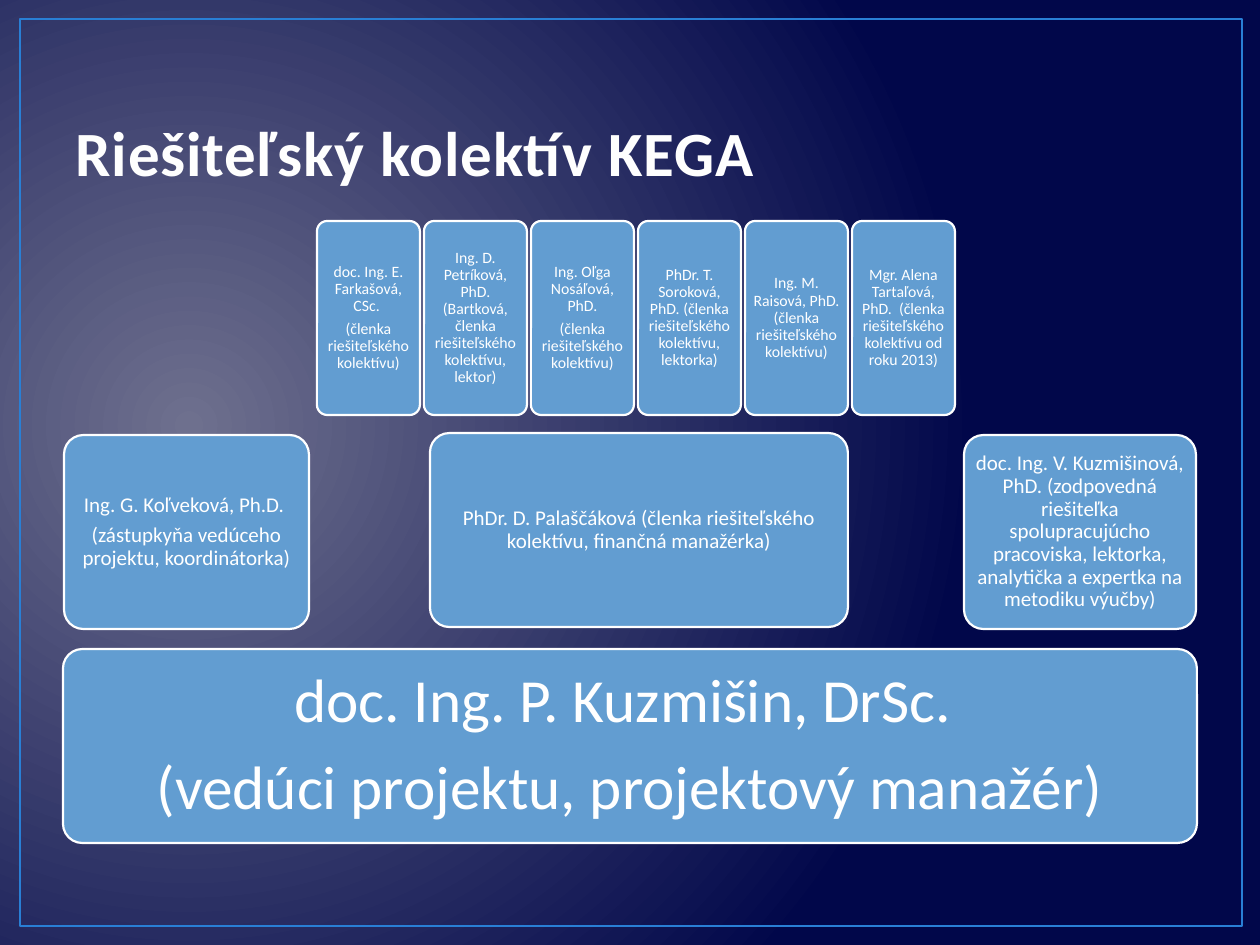
from lxml.etree import SubElement
from pptx import Presentation
from pptx.dml.color import RGBColor
from pptx.enum.shapes import MSO_SHAPE
from pptx.enum.text import MSO_ANCHOR, PP_ALIGN
from pptx.oxml.ns import qn
from pptx.util import Emu, Pt

PX_PER_INCH = 126
FONT = "Calibri"
WHITE, CARD_BLUE, FRAME_BLUE = "FFFFFF", "629DD1", "297FD5"
TITLE_WHITE, TITLE_EDGE = "FEFEFE", "234F77"
GLOW, NIGHT = "6E708E", "01074A"
CARD_HEIGHT = 194

# Top row: members of equal width at an equal step
MEMBER_LEFT, MEMBER_TOP, MEMBER_WIDTH, MEMBER_STEP = 317, 221, 103, 107
MEMBERS = [
    ["doc. Ing. E. Farkašová, CSc. ", "(členka riešiteľského kolektívu)"],
    ["Ing. D. Petríková, PhD. (Bartková, členka riešiteľského kolektívu, lektor)"],
    ["Ing. Oľga Nosáľová, PhD.", "(členka riešiteľského kolektívu)"],
    ["PhDr. T. Soroková, PhD. (členka riešiteľského kolektívu, lektorka)"],
    ["Ing. M. Raisová, PhD. (členka riešiteľského kolektívu)"],
    ["Mgr. Alena Tartaľová, PhD.  (členka riešiteľského kolektívu od roku 2013)"],
]

# Middle row: left, top, width, paragraphs
COORDINATORS = [
    (64, 435, 245, ["Ing. G. Koľveková, Ph.D. ",
                    "(zástupkyňa vedúceho projektu, koordinátorka)"]),
    (430, 433, 418, ["PhDr. D. Palaščáková (členka riešiteľského kolektívu, "
                     "finančná manažérka)"]),
    (964, 435, 232, ["doc. Ing. V. Kuzmišinová, PhD. (zodpovedná riešiteľka "
                     "spolupracujúcho pracoviska, lektorka, analytička a "
                     "expertka na metodiku výučby)"]),
]
LEADER = ["doc. Ing. P. Kuzmišin, DrSc. ", "(vedúci projektu, projektový manažér)"]


def px(length):
    return Emu(round(length * 914400 / PX_PER_INCH))


def rgb(code):
    return RGBColor.from_string(code)


def format_run(run, size, color):
    run.font.name = FONT
    run.font.size = Pt(size)
    run.font.color.rgb = rgb(color)


def set_background(slide):
    fill = slide.background.fill
    fill.gradient()
    for stop, color in zip(fill.gradient_stops, (GLOW, NIGHT)):
        stop.color.rgb = rgb(color)
    # Turn the linear gradient into a circular one
    gradient = slide.element.find(".//" + qn("a:gradFill"))
    gradient.remove(gradient.find(qn("a:lin")))
    circle = SubElement(gradient, qn("a:path"), {"path": "circle"})
    SubElement(circle, qn("a:fillToRect"),
               {"l": "15000", "t": "50000", "r": "85000", "b": "60000"})


def add_frame(slide):
    frame = slide.shapes.add_shape(
        MSO_SHAPE.RECTANGLE, px(20), px(19), px(1222), px(907))
    frame.shadow.inherit = False
    frame.fill.background()
    frame.line.color.rgb = rgb(FRAME_BLUE)
    frame.line.width = Pt(1.5)


def set_title(slide, heading):
    title = slide.shapes.title
    title.left, title.top, title.width, title.height = map(px, (63, 38, 1134, 157))
    title.text_frame.text = heading
    title.text_frame.vertical_anchor = MSO_ANCHOR.BOTTOM
    paragraph = title.text_frame.paragraphs[0]
    paragraph.alignment = PP_ALIGN.LEFT
    run = paragraph.runs[0]
    format_run(run, 36, TITLE_WHITE)
    run.font.bold = True
    # Letter spacing and a thin outline
    properties = run.font.fill and run._r.get_or_add_rPr()
    properties.set("spc", "50")
    outline = SubElement(properties, qn("a:ln"), {"w": str(Pt(1.05))})
    edge = SubElement(outline, qn("a:solidFill"))
    SubElement(edge, qn("a:srgbClr"), {"val": TITLE_EDGE})
    properties.insert(0, outline)


def add_card(slide, left, top, width, lines, size, inset):
    card = slide.shapes.add_shape(
        MSO_SHAPE.ROUNDED_RECTANGLE, px(left), px(top), px(width), px(CARD_HEIGHT))
    card.adjustments[0] = 0.1
    card.shadow.inherit = False
    card.fill.solid()
    card.fill.fore_color.rgb = rgb(CARD_BLUE)
    card.line.color.rgb = rgb(WHITE)
    card.line.width = Pt(1.25)

    frame = card.text_frame
    frame.word_wrap = True
    frame.vertical_anchor = MSO_ANCHOR.MIDDLE
    frame.margin_left = frame.margin_right = px(inset)
    frame.margin_top = frame.margin_bottom = px(inset)
    frame.text = "\n".join(lines)
    for paragraph in frame.paragraphs:
        paragraph.alignment = PP_ALIGN.CENTER
        paragraph.line_spacing = 0.9
        paragraph.space_after = Pt(0.35 * size)
        format_run(paragraph.runs[0], size, WHITE)


def main():
    deck = Presentation()
    deck.slide_width, deck.slide_height = px(1260), px(945)
    slide = deck.slides.add_slide(deck.slide_layouts[5])

    # Backdrop and heading
    set_background(slide)
    add_frame(slide)
    set_title(slide, "Riešiteľský kolektív KEGA")

    # Team, from the leader up to the members
    add_card(slide, 63, 649, 1134, LEADER, 35, 19)
    for left, top, width, lines in COORDINATORS:
        add_card(slide, left, top, width, lines, 12, 6)
    for index, lines in enumerate(MEMBERS):
        add_card(slide, MEMBER_LEFT + index * MEMBER_STEP, MEMBER_TOP,
                 MEMBER_WIDTH, lines, 9, 5)

    deck.save("out.pptx")


if __name__ == "__main__":
    main()
